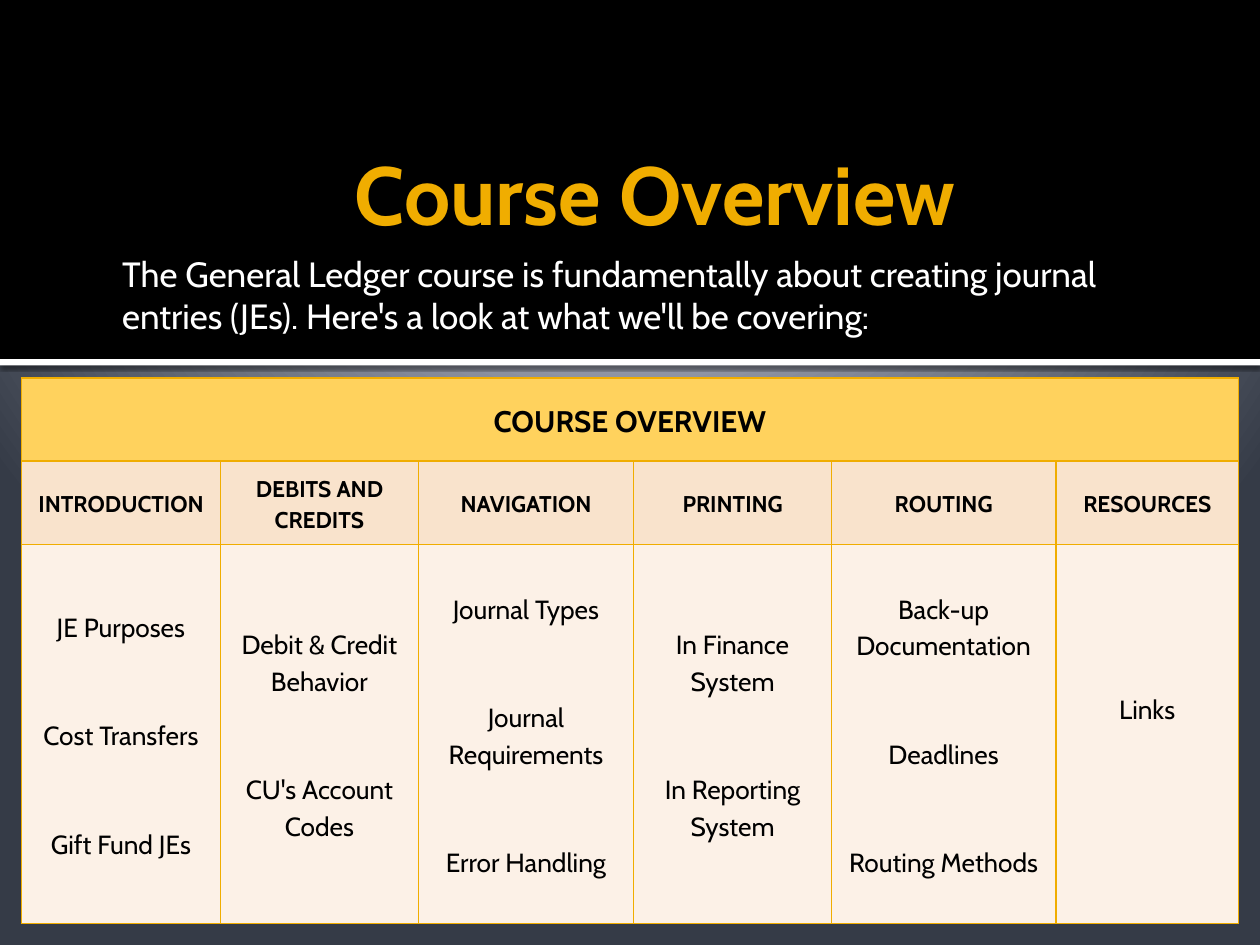
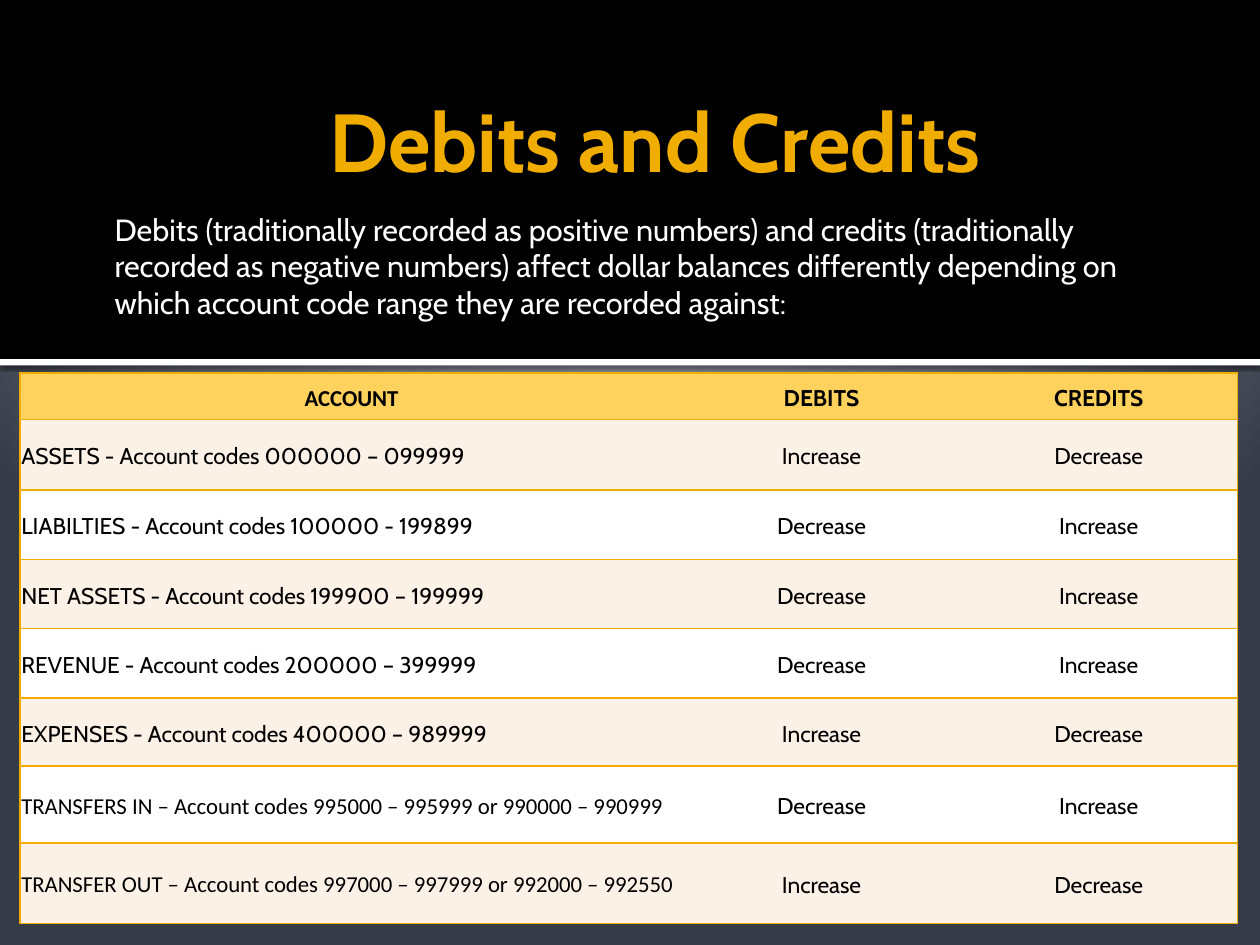
from dataclasses import dataclass

from lxml import etree
from pptx import Presentation
from pptx.dml.color import RGBColor as RGB
from pptx.enum.shapes import MSO_SHAPE as Shape
from pptx.enum.text import MSO_ANCHOR as Anchor, MSO_AUTO_SIZE as AutoSize, PP_ALIGN as Align
from pptx.oxml import parse_xml
from pptx.oxml.ns import nsdecls, qn
from pptx.util import Inches, Pt

NO_TABLE_STYLE = "{2D5ABB26-0587-4C30-8999-92F81FD0307C}"


@dataclass(frozen=True)
class Theme:
    font: str = "Cabin"
    alt_font: str = "Calibri"
    black: str = "000000"
    white: str = "FFFFFF"
    gold: str = "F0AD00"
    header: str = "FFD25D"
    subheader: str = "F9E3CC"
    cream: str = "FCF1E7"
    backdrop: tuple = ((0, "C1C5D3"), (12, "C1C5D3"), (20, "BFC4D2"), (100, "353B47"))
    title_size: float = 47
    lead_size: float = 20
    small_lead_size: float = 17.5
    banner_size: float = 17
    topic_size: float = 15
    cell_size: float = 13
    line_spacing: float = 1.15
    topic_gap: float = 41


class Deck:
    def __init__(self, theme):
        self.theme = theme
        self.prs = Presentation()
        self.prs.slide_width, self.prs.slide_height = Inches(10), Inches(7.5)
        self.slide = None
        self.paint_backdrop()

    def paint_backdrop(self):
        """Give the master a radial gradient that glows from above the slide."""
        master = self.prs.slide_master
        master.background.fill.solid()
        solid = master.element.find(".//" + qn("p:bgPr")).find(qn("a:solidFill"))
        stops = "".join(
            f'<a:gs pos="{percent * 1000}"><a:srgbClr val="{color}"/></a:gs>'
            for percent, color in self.theme.backdrop)
        solid.getparent().replace(solid, parse_xml(
            f'<a:gradFill {nsdecls("a")} rotWithShape="1"><a:gsLst>{stops}</a:gsLst>'
            '<a:path path="circle"><a:fillToRect l="10000" t="-25000" r="10000" b="125000"/>'
            '</a:path></a:gradFill>'))

    def add_slide(self, title, title_height):
        self.slide = self.prs.slides.add_slide(self.prs.slide_layouts[5])
        self.band(0, 2.85, self.theme.black)
        rule = self.band(2.85, 0.05, self.theme.white)
        effects = rule.element.spPr.find(qn("a:effectLst"))
        effects.append(parse_xml(
            f'<a:outerShdw {nsdecls("a")} blurRad="{Pt(2.5)}" dist="{Pt(0.8)}" dir="5400000">'
            f'<a:srgbClr val="{self.theme.black}"><a:alpha val="60000"/></a:srgbClr></a:outerShdw>'))
        self.title(title, title_height)

    def band(self, top, height, color):
        band = self.slide.shapes.add_shape(
            Shape.RECTANGLE, 0, Inches(top), self.prs.slide_width, Inches(height))
        band.shadow.inherit = False
        band.fill.solid()
        band.fill.fore_color.rgb = RGB.from_string(color)
        band.line.fill.background()
        return band

    def title(self, text, height):
        title = self.slide.shapes.title
        title.element.getparent().append(title.element)  # in front of the bands
        title.left, title.top = Inches(0.82), Inches(0.13)
        title.width, title.height = Inches(8.76), Inches(height)
        frame = title.text_frame
        self.set_frame(frame, 0.1, 0.1)
        frame.vertical_anchor = Anchor.BOTTOM
        frame.text = text
        self.style(frame.paragraphs[0], self.theme.title_size, self.theme.gold, True, Align.CENTER)

    def lead(self, text, left, top, size):
        lead = self.slide.shapes.add_textbox(
            Inches(left), Inches(top), Inches(8.77), Inches(0.75))
        self.set_frame(lead.text_frame, 0.16, 0.05)
        lead.text_frame.text = text
        self.style(lead.text_frame.paragraphs[0], size, self.theme.white)

    def set_frame(self, frame, left, right):
        frame.word_wrap = True
        frame.auto_size = AutoSize.NONE
        frame.margin_left, frame.margin_right = Inches(left), Inches(right)
        frame.margin_top = frame.margin_bottom = 0

    def style(self, paragraph, size, color, bold=False, align=Align.LEFT, font=None):
        paragraph.alignment = align
        paragraph.font.name = font or self.theme.font
        paragraph.font.size = Pt(size)
        paragraph.font.bold = bold
        paragraph.font.color.rgb = RGB.from_string(color)

    def table(self, left, top, widths, heights):
        frame = self.slide.shapes.add_table(
            len(heights), len(widths), Inches(left), Inches(top),
            Inches(sum(widths)), Inches(sum(heights)))
        table = frame.table
        table.first_row = table.horz_banding = False
        frame.element.find(".//" + qn("a:tableStyleId")).text = NO_TABLE_STYLE
        for column, width in zip(table.columns, widths):
            column.width = Inches(width)
        for row, height in zip(table.rows, heights):
            row.height = Inches(height)
        return table

    def cell(self, cell, text, fill, size, bold=False, align=Align.CENTER, font=None, sides="LRTB"):
        """Fill a cell; each line of text becomes a paragraph set apart by the topic gap."""
        cell.fill.solid()
        cell.fill.fore_color.rgb = RGB.from_string(fill)
        cell.vertical_anchor = Anchor.MIDDLE
        cell.margin_left = cell.margin_right = cell.margin_top = cell.margin_bottom = Inches(0.01)
        cell.text_frame.text = text
        for index, paragraph in enumerate(cell.text_frame.paragraphs):
            self.style(paragraph, size, self.theme.black, bold, align, font)
            paragraph.line_spacing = self.theme.line_spacing
            if index:
                paragraph.space_before = Pt(self.theme.topic_gap)
        self.borders(cell, sides)

    def borders(self, cell, sides):
        properties = cell._tc.get_or_add_tcPr()
        for index, side in enumerate(sides):
            line = etree.Element(qn(f"a:ln{side}"), w=str(Pt(1)))
            fill = etree.SubElement(line, qn("a:solidFill"))
            etree.SubElement(fill, qn("a:srgbClr"), val=self.theme.gold)
            properties.insert(index, line)


def add_course_overview(deck):
    theme = deck.theme
    deck.add_slide("Course Overview", 1.79)
    deck.lead("The General Ledger course is fundamentally about creating journal entries (JEs). "
              "Here's a look at what we'll be covering:", 0.81, 2, theme.lead_size)
    modules = {
        "INTRODUCTION": ["JE Purposes", "Cost Transfers", "Gift Fund JEs"],
        "DEBITS AND CREDITS": ["Debit & Credit Behavior", "CU's Account Codes"],
        "NAVIGATION": ["Journal Types", "Journal Requirements", "Error Handling"],
        "PRINTING": ["In Finance System", "In Reporting System"],
        "ROUTING": ["Back-up Documentation", "Deadlines", "Routing Methods"],
        "RESOURCES": ["Links"],
    }
    overview = deck.table(0.17, 3, [1.58, 1.57, 1.71, 1.57, 1.78, 1.45], [0.66, 0.66, 3.01])
    for column, (module, topics) in enumerate(modules.items()):
        banner = "" if column else "COURSE OVERVIEW"
        deck.cell(overview.cell(0, column), banner, theme.header, theme.banner_size, True)
        deck.cell(overview.cell(1, column), module, theme.subheader, theme.cell_size, True)
        deck.cell(overview.cell(2, column), "\n".join(topics), theme.cream, theme.topic_size)
    overview.cell(0, 0).merge(overview.cell(0, len(modules) - 1))
    overview.cell(2, len(modules) - 1).margin_bottom = Inches(0.43)  # lifts the lone topic


def add_debits_and_credits(deck):
    theme = deck.theme
    deck.add_slide("Debits and Credits", 1.37)
    deck.lead("Debits (traditionally recorded as positive numbers) and credits (traditionally "
              "recorded as negative numbers) affect dollar balances differently depending on "
              "which account code range they are recorded against:",
              0.75, 1.67, theme.small_lead_size)
    up, down = "Increase", "Decrease"
    rows = [
        ("ACCOUNT", "DEBITS", "CREDITS"),
        ("ASSETS - Account codes 000000 – 099999", up, down),
        ("LIABILTIES - Account codes 100000 - 199899", down, up),
        ("NET ASSETS - Account codes 199900 – 199999", down, up),
        ("REVENUE - Account codes 200000 – 399999", down, up),
        ("EXPENSES - Account codes 400000 – 989999", up, down),
        ("TRANSFERS IN – Account codes 995000 – 995999 or 990000 – 990999", down, up),
        ("TRANSFER OUT – Account codes 997000 – 997999 or 992000 – 992550", up, down),
    ]
    effects = deck.table(0.16, 2.96, [5.26, 2.2, 2.2],
                         [0.37, 0.56, 0.55, 0.55, 0.55, 0.54, 0.61, 0.64])
    for row, texts in enumerate(rows):
        is_header = row == 0
        fill = theme.header if is_header else theme.cream if row % 2 else theme.white
        for column, (text, sides) in enumerate(zip(texts, ("LTB", "TB", "RTB"))):
            is_account = column == 0
            alt = is_account and (is_header or text.startswith("TRANSFER"))
            deck.cell(effects.cell(row, column), text, fill, theme.cell_size, is_header,
                      Align.LEFT if is_account and not is_header else Align.CENTER,
                      theme.alt_font if alt else theme.font, sides)


def main():
    deck = Deck(Theme())
    add_course_overview(deck)
    add_debits_and_credits(deck)
    deck.prs.save("out.pptx")


if __name__ == "__main__":
    main()
